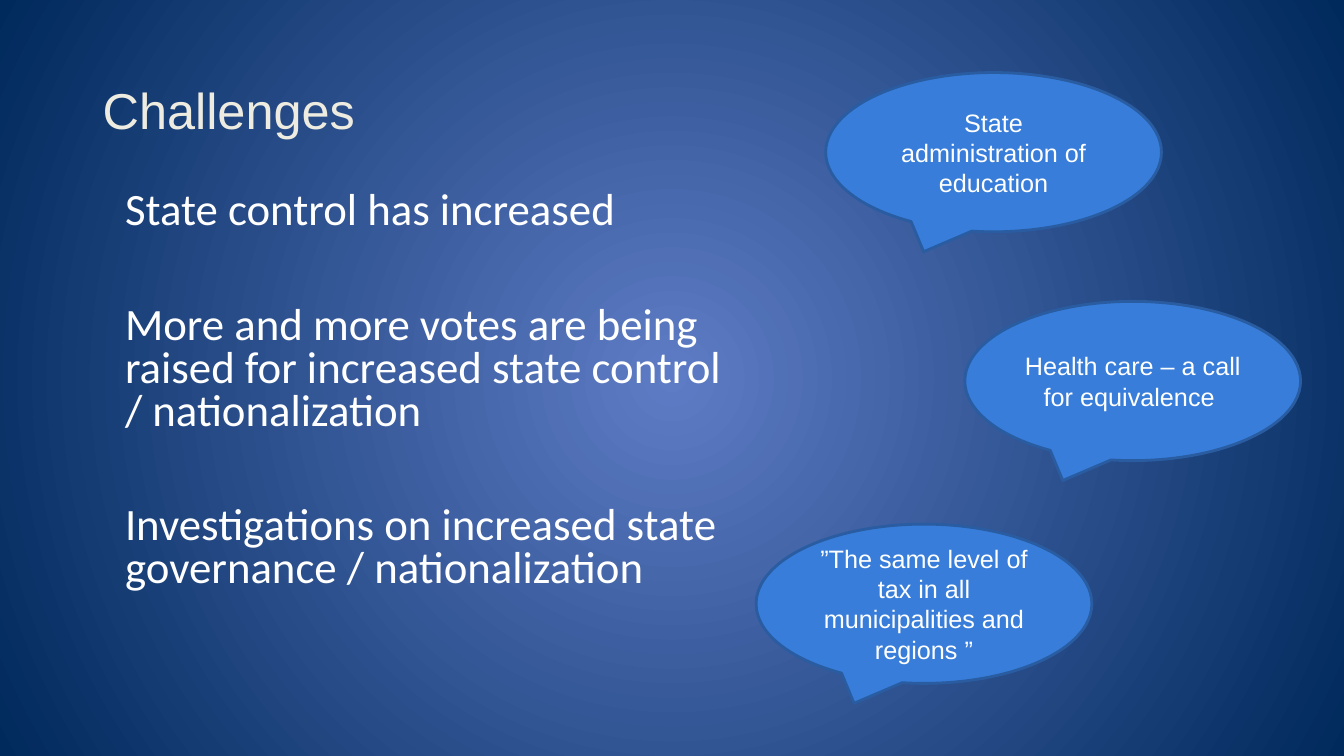
from dataclasses import dataclass

import lxml.etree
import pptx
import pptx.dml.color
import pptx.enum.shapes
import pptx.enum.text
import pptx.oxml.ns
import pptx.util

Inches = pptx.util.Inches
Pt = pptx.util.Pt
Align = pptx.enum.text.PP_ALIGN
Anchor = pptx.enum.text.MSO_ANCHOR

BACKGROUND = ("5E7CC5", "00295C")
CALLOUT_WIDTH, CALLOUT_HEIGHT = 3.33, 1.58


@dataclass
class TextStyle:
    font: str
    size: float
    color: str
    anchor: Anchor
    align: Align = Align.LEFT
    line_spacing: float = 1.0
    gap: float = 0
    margin_left: float = 0.1


@dataclass
class TextBlock:
    left: float
    top: float
    width: float
    height: float
    lines: tuple[str, ...]
    style: TextStyle


@dataclass
class Callout:
    left: float
    top: float
    text: str


TITLE_STYLE = TextStyle("Arial", 36, "EEECE1", Anchor.MIDDLE, line_spacing=0.9)
BODY_STYLE = TextStyle("Calibri", 32, "FFFFFF", Anchor.TOP,
                       line_spacing=0.8, gap=51, margin_left=0.13)
CALLOUT_STYLE = TextStyle("Arial", 18, "FFFFFF", Anchor.MIDDLE, Align.CENTER)

TEXT_BLOCKS = (
    TextBlock(0.92, 0.4, 11.5, 1.45, ("Challenges",), TITLE_STYLE),
    TextBlock(1.11, 1.85, 6.19, 4.34, (
        "State control has increased",
        "More and more votes are being raised for increased state control / nationalization",
        "Investigations on increased state governance / nationalization",
    ), BODY_STYLE),
)

CALLOUTS = (
    Callout(7.5, 5.2, "”The same level of tax in all municipalities and regions ”"),
    Callout(9.57, 2.99, "Health care – a call for equivalence "),
    Callout(8.19, 0.72, "State administration of education"),
)


def rgb(color: str) -> pptx.dml.color.RGBColor:
    return pptx.dml.color.RGBColor.from_string(color)


def apply(target: object, values: dict[str, object]) -> None:
    for name, value in values.items():
        setattr(target, name, value)


def write_text(frame: pptx.text.text.TextFrame, lines: tuple[str, ...], style: TextStyle) -> None:
    apply(frame, {
        "word_wrap": True,
        "vertical_anchor": style.anchor,
        "margin_left": Inches(style.margin_left),
    })
    for index, line in enumerate(lines):
        para = frame.paragraphs[0] if index == 0 else frame.add_paragraph()
        apply(para, {
            "alignment": style.align,
            "line_spacing": style.line_spacing,
            "space_before": Pt(style.gap if index else 0),
        })
        span = para.add_run()
        span.text = line
        apply(span.font, {"name": style.font, "size": Pt(style.size)})
        span.font.color.rgb = rgb(style.color)


def paint_background(page: pptx.slide.Slide) -> None:
    fill = page.background.fill
    fill.gradient()
    for stop, color in zip(fill.gradient_stops, BACKGROUND):
        stop.color.rgb = rgb(color)
    qn = pptx.oxml.ns.qn
    gradient = page.element.find(".//" + qn("a:gradFill"))
    gradient.remove(gradient.find(qn("a:lin")))
    circle = lxml.etree.Element(qn("a:path"), {"path": "circle"})
    lxml.etree.SubElement(circle, qn("a:fillToRect"), dict.fromkeys("ltrb", "50000"))
    gradient.find(qn("a:gsLst")).addnext(circle)


def draw_text_block(page: pptx.slide.Slide, block: TextBlock) -> None:
    box = page.shapes.add_textbox(Inches(block.left), Inches(block.top),
                                  Inches(block.width), Inches(block.height))
    write_text(box.text_frame, block.lines, block.style)


def draw_callout(page: pptx.slide.Slide, callout: Callout) -> None:
    bubble = page.shapes.add_shape(
        pptx.enum.shapes.MSO_SHAPE.OVAL_CALLOUT,
        Inches(callout.left), Inches(callout.top),
        Inches(CALLOUT_WIDTH), Inches(CALLOUT_HEIGHT))
    bubble.shadow.inherit = False
    bubble.fill.solid()
    bubble.fill.fore_color.rgb = rgb("377DD9")
    bubble.line.color.rgb = rgb("295CA1")
    bubble.line.width = Pt(2)
    write_text(bubble.text_frame, (callout.text,), CALLOUT_STYLE)


def main() -> None:
    deck = pptx.Presentation()
    apply(deck, {"slide_width": Inches(13.33), "slide_height": Inches(7.5)})
    page = deck.slides.add_slide(deck.slide_layouts[6])
    paint_background(page)
    for block in TEXT_BLOCKS:
        draw_text_block(page, block)
    for callout in CALLOUTS:
        draw_callout(page, callout)
    deck.save("out.pptx")


if __name__ == "__main__":
    main()
